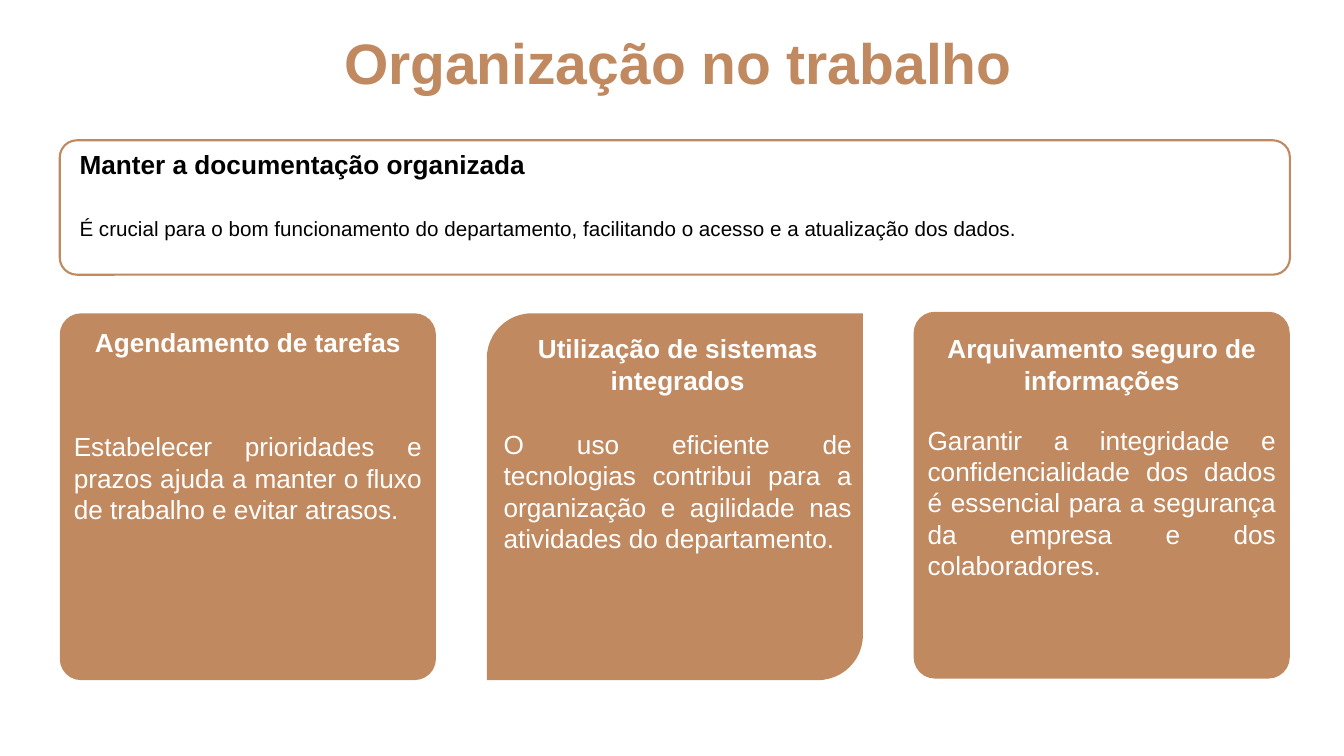
from pptx import Presentation
from pptx.dml.color import RGBColor as Rgb
from pptx.enum.shapes import MSO_SHAPE as Kind
from pptx.enum.text import MSO_ANCHOR as Anchor, MSO_AUTO_SIZE as Fit, PP_ALIGN as Align
from pptx.util import Pt

HUES = {"clay": "C18960", "ink": "000000", "white": "FFFFFF"}


class Deck:
    font = "Arial"
    inset = 10
    before = 5

    def __init__(self, wide, high):
        self.file = Presentation()
        self.file.slide_width, self.file.slide_height = Pt(wide), Pt(high)
        self.slide = self.file.slides.add_slide(self.file.slide_layouts[5])

    def hue(self, name):
        return Rgb.from_string(HUES[name])

    def panel(self, kind, box, round_by, fill=None, line=None):
        shape = self.slide.shapes.add_shape(kind, *map(Pt, box))
        shape.shadow.inherit = False
        shape.adjustments[0] = round_by
        if fill:
            shape.fill.solid()
            shape.fill.fore_color.rgb = self.hue(fill)
        else:
            shape.fill.background()
        if line:
            shape.line.color.rgb = self.hue(line)
            shape.line.width = Pt(1.5)
        else:
            shape.line.fill.background()

    def style(self, shape, text, size, hue, bold, align, space):
        frame = shape.text_frame
        frame.text = text
        frame.word_wrap = True
        frame.auto_size = Fit.NONE
        frame.vertical_anchor = Anchor.TOP
        frame.margin_left = frame.margin_right = Pt(self.inset)
        frame.margin_top = frame.margin_bottom = Pt(self.inset)
        para = frame.paragraphs[0]
        para.alignment = align
        para.line_spacing = space
        para.space_before = Pt(self.before)
        font = para.runs[0].font
        font.name, font.size, font.bold = self.font, Pt(size), bold
        font.color.rgb = self.hue(hue)

    def title(self, box, text, size, hue):
        shape = self.slide.shapes.title
        shape.left, shape.top, shape.width, shape.height = map(Pt, box)
        self.style(shape, text, size, hue, True, Align.CENTER, 0.8)

    def text(self, box, text, size, hue, bold=False, align=Align.JUSTIFY, space=1.0):
        shape = self.slide.shapes.add_textbox(*map(Pt, box))
        self.style(shape, text, size, hue, bold, align, space)

    def save(self):
        self.file.save("out.pptx")


CARDS = [
    (Kind.ROUNDED_RECTANGLE, 0.058, 42.7, 223.8, 42.7, 0.8, 297.5, 88,
     "Agendamento de tarefas",
     "Estabelecer prioridades e prazos ajuda a manter o fluxo de trabalho e evitar atrasos."),
    (Kind.ROUND_2_DIAG_RECTANGLE, 0.123, 347.7, 223.8, 349.7, 1.0, 296, 111,
     "Utilização de sistemas integrados",
     "O uso eficiente de tecnologias contribui para a organização e agilidade nas "
     "atividades do departamento."),
    (Kind.ROUNDED_RECTANGLE, 0.058, 652.6, 222.7, 652.6, 1.0, 292.8, 133,
     "Arquivamento seguro de informações",
     "Garantir a integridade e confidencialidade dos dados é essencial para a segurança "
     "da empresa e dos colaboradores."),
]


def main():
    deck = Deck(960, 540)
    deck.title((46.8, 19.4, 874.8, 60.5), "Organização no trabalho", 40.7, "clay")

    deck.panel(Kind.ROUNDED_RECTANGLE, (42.7, 100.2, 878.7, 96), 0.127, line="clay")
    deck.text((46.8, 100.2, 874.8, 38.9), "Manter a documentação organizada",
              18.7, "ink", True, Align.LEFT, 0.8)
    deck.text((46.8, 144, 874.8, 38.2),
              "É crucial para o bom funcionamento do departamento, facilitando o acesso "
              "e a atualização dos dados.", 14.7, "ink")

    wide, high = 268.7, 262
    for kind, curve, left, top, inner, space, low, tall, head, body in CARDS:
        deck.panel(kind, (left, top, wide, high), curve, fill="clay")
        deck.text((inner, 227.5, wide, 65.5), head, 18.7, "white", True, Align.CENTER, space)
        deck.text((inner, low, wide, tall), body, 18.7, "white")
    deck.save()


if __name__ == "__main__":
    main()
